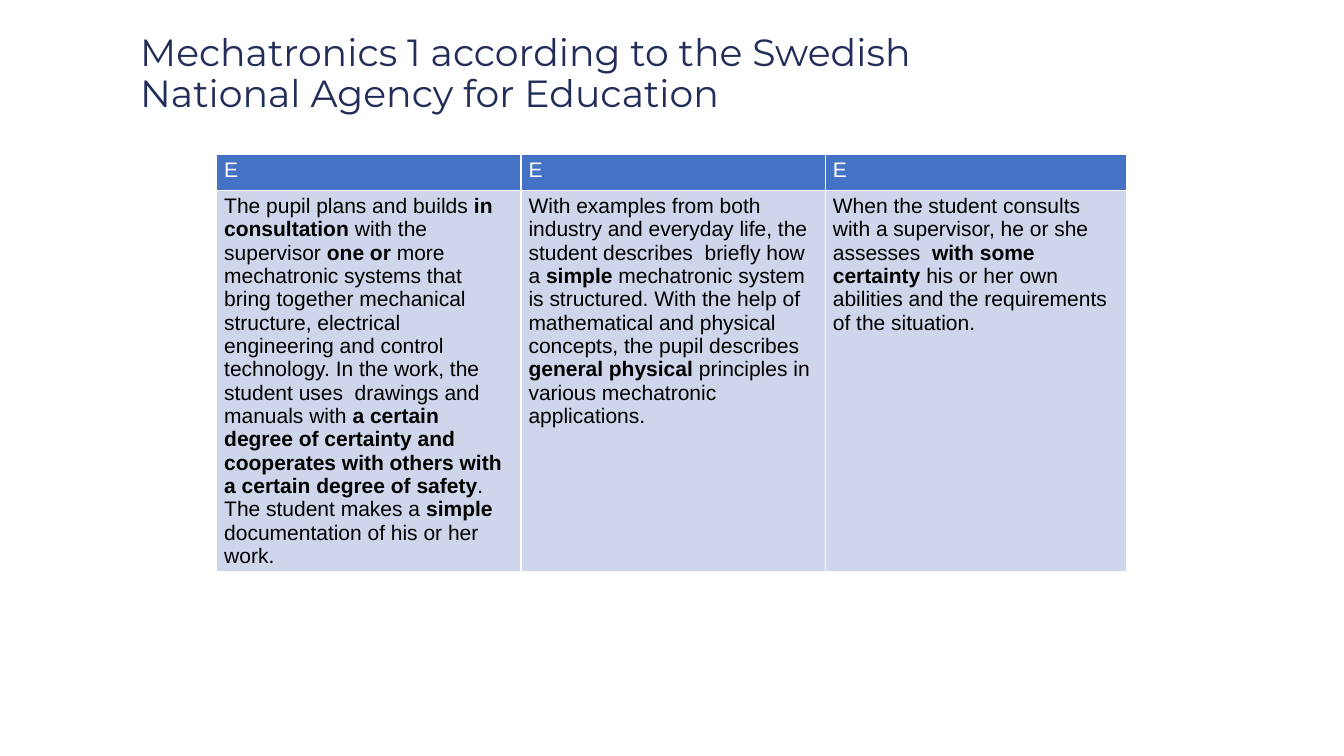
from dataclasses import dataclass

from lxml import etree
from pptx import Presentation
from pptx.dml.color import RGBColor
from pptx.enum.text import MSO_ANCHOR, MSO_AUTO_SIZE, PP_ALIGN
from pptx.oxml.ns import qn
from pptx.slide import Slide
from pptx.table import _Cell
from pptx.util import Cm, Pt

LEFT = PP_ALIGN.LEFT
MIDDLE = MSO_ANCHOR.MIDDLE
NO_AUTOFIT = MSO_AUTO_SIZE.NONE

NAVY = RGBColor(0x22, 0x2D, 0x59)
BLUE = RGBColor(0x44, 0x72, 0xC4)
PALE_BLUE = RGBColor(0xCF, 0xD5, 0xEA)
WHITE = RGBColor(0xFF, 0xFF, 0xFF)
BLACK = RGBColor(0x00, 0x00, 0x00)

TITLE = "Mechatronics 1 according to the Swedish National Agency for Education"
HEADER_HEIGHT = Cm(0.91)
BODY_HEIGHT = Cm(9.6)


@dataclass(frozen=True)
class Span:
    text: str
    bold: bool = False


@dataclass(frozen=True)
class Criterion:
    grade: str
    width: Cm
    spans: tuple[Span, ...]


CRITERIA = (
    Criterion("E", Cm(7.67), (
        Span("The pupil plans and builds "),
        Span("in consultation", True),
        Span(" with the supervisor "),
        Span("one or", True),
        Span(" more mechatronic systems that bring together mechanical structure, "
             "electrical engineering and control technology. In the work, the "
             "student uses  drawings and manuals with "),
        Span("a certain degree of certainty and cooperates with others with "
             "a certain degree of safety", True),
        Span(". The student makes a "),
        Span("simple ", True),
        Span("documentation of his or her work."),
    )),
    Criterion("E", Cm(7.67), (
        Span("With examples from both industry and everyday life, the student "
             "describes  briefly how a "),
        Span("simple ", True),
        Span("mechatronic system is structured. With the help of mathematical "
             "and physical concepts, the pupil describes "),
        Span("general physical ", True),
        Span("principles in various mechatronic applications."),
    )),
    Criterion("E", Cm(7.59), (
        Span("When the student consults with a supervisor, he or she assesses "),
        Span(" with some certainty ", True),
        Span("his or her own abilities and the requirements of the situation."),
    )),
)


def add_borders(cell: _Cell) -> None:
    """Put a thin white line on all four sides, ahead of the cell fill."""
    properties = cell._tc.get_or_add_tcPr()
    for position, side in enumerate(("lnL", "lnR", "lnT", "lnB")):
        line = etree.Element(qn(f"a:{side}"), w=str(Pt(1)))
        fill = etree.SubElement(line, qn("a:solidFill"))
        etree.SubElement(fill, qn("a:srgbClr"), val=str(WHITE))
        properties.insert(position, line)


def fill_cell(cell: _Cell, spans: tuple[Span, ...], fill: RGBColor, color: RGBColor) -> None:
    cell.margin_left = cell.margin_right = Cm(0.19)
    cell.margin_top = cell.margin_bottom = Cm(0.1)
    cell.fill.solid()
    cell.fill.fore_color.rgb = fill
    add_borders(cell)
    para = cell.text_frame.paragraphs[0]
    for span in spans:
        run = para.add_run()
        run.text = span.text
        run.font.name = "Arial"
        run.font.size = Pt(15)
        run.font.bold = span.bold
        run.font.color.rgb = color


def add_title(page: Slide) -> None:
    title = page.shapes.title
    title.left, title.top, title.width, title.height = Cm(3.28), Cm(0.05), Cm(22.5), Cm(3.68)
    frame = title.text_frame
    frame.text = TITLE
    frame.word_wrap = True
    frame.auto_size = NO_AUTOFIT
    frame.vertical_anchor = MIDDLE
    para = frame.paragraphs[0]
    para.alignment = LEFT
    para.line_spacing = 0.9
    font = para.runs[0].font
    font.name = "Montserrat"
    font.size = Pt(27)
    font.color.rgb = NAVY


def add_criteria_table(page: Slide) -> None:
    width = sum(criterion.width for criterion in CRITERIA)
    table = page.shapes.add_table(
        2, len(CRITERIA), Cm(5.46), Cm(3.89), width, HEADER_HEIGHT + BODY_HEIGHT
    ).table
    table.rows[0].height = HEADER_HEIGHT
    table.rows[1].height = BODY_HEIGHT
    for index, criterion in enumerate(CRITERIA):
        table.columns[index].width = criterion.width
        fill_cell(table.cell(0, index), (Span(criterion.grade),), BLUE, WHITE)
        fill_cell(table.cell(1, index), criterion.spans, PALE_BLUE, BLACK)


def main() -> None:
    deck = Presentation()
    deck.slide_width = Cm(33.87)
    deck.slide_height = Cm(19.05)
    page = deck.slides.add_slide(deck.slide_layouts.get_by_name("Title Only"))
    add_title(page)
    add_criteria_table(page)
    deck.save("out.pptx")


if __name__ == "__main__":
    main()
